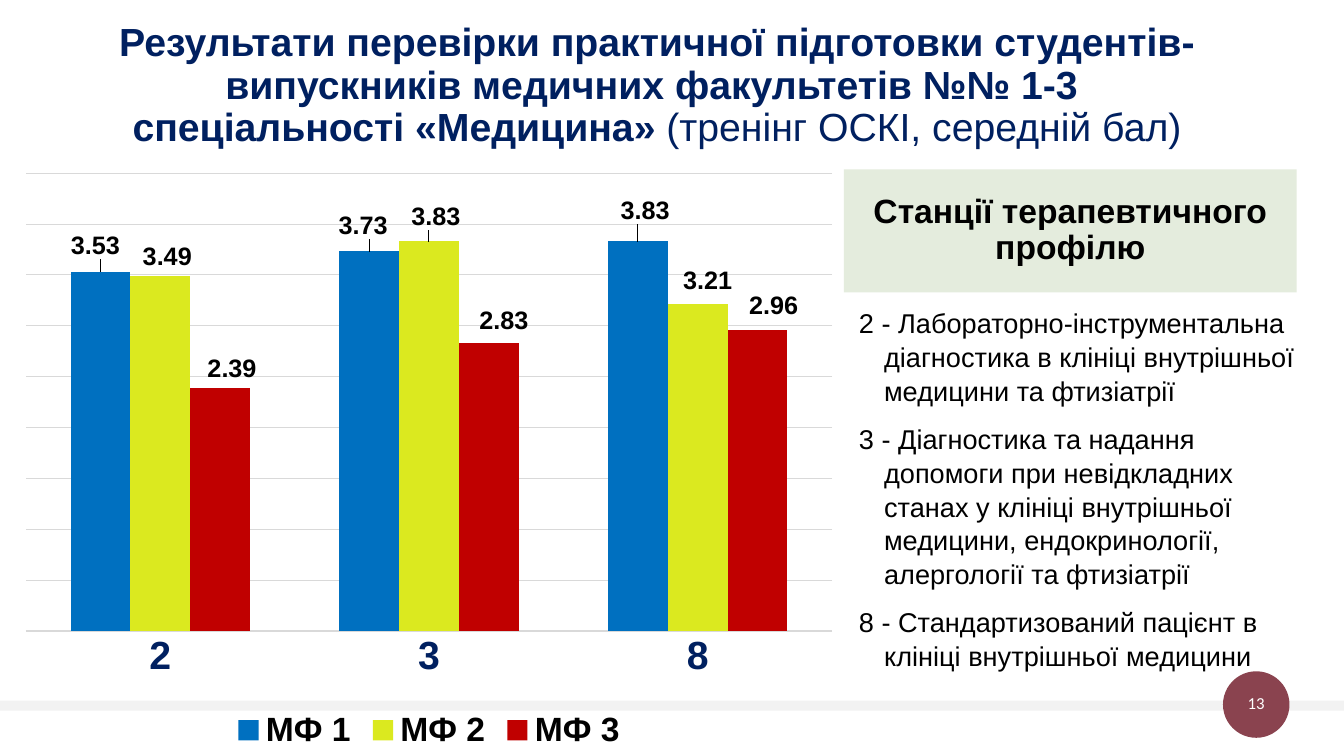
from lxml import etree
from pptx import Presentation
from pptx import util as u
from pptx.chart.data import CategoryChartData
from pptx.dml.color import RGBColor
from pptx.enum import chart as ch, shapes, text
from pptx.oxml import parse_xml

PX = 9144  # 100 px to the inch
C_NS = "http://schemas.openxmlformats.org/drawingml/2006/chart"
NAVY, BLACK = "002060", "000000"


def rgb(color):
    return RGBColor.from_string(color)


def style(font, size, color, bold=False, name="Arial"):
    font.size, font.bold, font.name = u.Pt(size), bold, name
    font.color.rgb = rgb(color)


prs = Presentation()
prs.slide_width, prs.slide_height = 1333 * PX, 750 * PX
s = prs.slides.add_slide(prs.slide_layouts[6])

# Footer band, number badge and station panel
panels = []
for kind, box, fill in [
    (shapes.MSO_SHAPE.RECTANGLE, (0, 695, 1333, 10), "F2F2F2"),
    (shapes.MSO_SHAPE.OVAL, (1213, 666, 66, 66), "8A434F"),
    (shapes.MSO_SHAPE.RECTANGLE, (837, 168, 449, 122), "E4ECDD"),
]:
    sp = s.shapes.add_shape(kind, *[v * PX for v in box])
    sp.shadow.inherit = False
    sp.fill.solid()
    sp.fill.fore_color.rgb = rgb(fill)
    sp.line.fill.background()
    panels.append(sp)
band, badge, station_panel = panels

# Page number and panel heading
for sp, words, size, color, bold, name in [
    (badge, "13", 12, "FFFFFF", False, "Calibri"),
    (station_panel, "Станції терапевтичного профілю", 24, BLACK, True, "Arial"),
]:
    tf = sp.text_frame
    tf.word_wrap = True
    tf.vertical_anchor = text.MSO_ANCHOR.MIDDLE
    tf.text = words
    p = tf.paragraphs[0]
    p.alignment, p.line_spacing = text.PP_ALIGN.CENTER, 0.9
    style(p.runs[0].font, size, color, bold, name)
tf = badge.text_frame
tf.margin_left = tf.margin_right = tf.margin_top = tf.margin_bottom = 0

# Title
tf = s.shapes.add_textbox(51 * PX, 18 * PX, 1211 * PX, 142 * PX).text_frame
tf.word_wrap, tf.margin_left = True, 0
p = tf.paragraphs[0]
p.text = ("Результати перевірки практичної підготовки студентів-випускників "
          "медичних факультетів №№ 1-3 \vспеціальності «Медицина» ")
p.add_run().text = "(тренінг ОСКІ, середній бал)"
p.alignment, p.line_spacing = text.PP_ALIGN.CENTER, 0.9
for r in p.runs:
    style(r.font, 28, NAVY, True)
p.runs[-1].font.bold = False

# Station descriptions
stations = [
    "2 - Лабораторно-інструментальна діагностика в клініці внутрішньої "
    "медицини та фтизіатрії",
    "3 - Діагностика та надання допомоги при невідкладних станах у клініці "
    "внутрішньої медицини, ендокринології, алергології та фтизіатрії",
    "8 - Стандартизований пацієнт в клініці внутрішньої медицини",
]
tf = s.shapes.add_textbox(842 * PX, 298 * PX, 472 * PX, 411 * PX).text_frame
tf.word_wrap = True
tf.text = "\n".join(stations)
for p in tf.paragraphs:
    p.space_before, p.line_spacing = u.Pt(10), 1.04
    pPr = p._p.get_or_add_pPr()
    pPr.set("marL", str(25 * PX))
    pPr.set("indent", str(-25 * PX))
    style(p.runs[0].font, 19.4, BLACK)

# Chart: name, colour, values and label shifts (px) for each series
CHART_W, CHART_H = 833, 590
series = [
    ("МФ 1", "0070C0", (3.53, 3.73, 3.83), ((-5, -8), (-6, -8), (7, -13))),
    ("МФ 2", "DBE91F", (3.49, 3.83, 3.21), ((7, -1), (7, -7), (10, -6))),
    ("МФ 3", "C00000", (2.39, 2.83, 2.96), ((12, -1), (15, -4), (16, -6))),
]
data = CategoryChartData()
data.categories = ["2", "3", "8"]
for name, _, values, _ in series:
    data.add_series(name, values)
chart = s.shapes.add_chart(ch.XL_CHART_TYPE.COLUMN_CLUSTERED, 9 * PX, 160 * PX,
                           CHART_W * PX, CHART_H * PX, data).chart
style(chart.font, 10, BLACK, name="Calibri")
chart.has_title = False
chart.has_legend = True
chart.legend.position = ch.XL_LEGEND_POSITION.BOTTOM
chart.legend.include_in_layout = False
style(chart.legend.font, 24, BLACK, True)


def layout(x, y, size=""):
    modes = '<c:layoutTarget val="inner"/><c:xMode val="edge"/><c:yMode val="edge"/>'
    return parse_xml(f'<c:layout xmlns:c="{C_NS}"><c:manualLayout>{modes if size else ""}'
                     f'<c:x val="{x:.4f}"/><c:y val="{y:.4f}"/>{size}'
                     '</c:manualLayout></c:layout>')


# Axes and plot area
cat, val = chart.category_axis, chart.value_axis
cat.major_tick_mark = ch.XL_TICK_MARK.NONE
style(cat.tick_labels.font, 28, NAVY, True)
val.minimum_scale, val.maximum_scale, val.major_unit = 0, 4.5, 0.5
val.visible = False
val.has_major_gridlines = True
for line in (cat.format.line, val.major_gridlines.format.line):
    line.color.rgb, line.width = rgb("D9D9D9"), u.Pt(0.75)
area = chart._chartSpace.chart.plotArea
for old in area.findall(f"{{{C_NS}}}layout"):
    area.remove(old)
area.insert(0, layout(0.02, 0.02, '<c:w val="0.96"/><c:h val="0.77"/>'))

# Bars and value labels
plot = chart.plots[0]
plot.gap_width, plot.overlap, plot.vary_by_categories = 150, 0, False
for ser, (_, color, _, shifts) in zip(plot.series, series):
    ser.format.fill.solid()
    ser.format.fill.fore_color.rgb = rgb(color)
    labels = ser.data_labels
    labels.show_value = True
    labels.position = ch.XL_LABEL_POSITION.OUTSIDE_END
    style(labels.font, 18, BLACK, True)
    for i, (dx, dy) in enumerate(shifts):
        label = ser.points[i].data_label
        label.position = ch.XL_LABEL_POSITION.OUTSIDE_END
        style(label.font, 18, BLACK, True)
        dLbl = labels._element.findall(f"{{{C_NS}}}dLbl")[i]
        dLbl.insert(1, layout(dx / CHART_W, dy / CHART_H))

prs.save("out.pptx")
